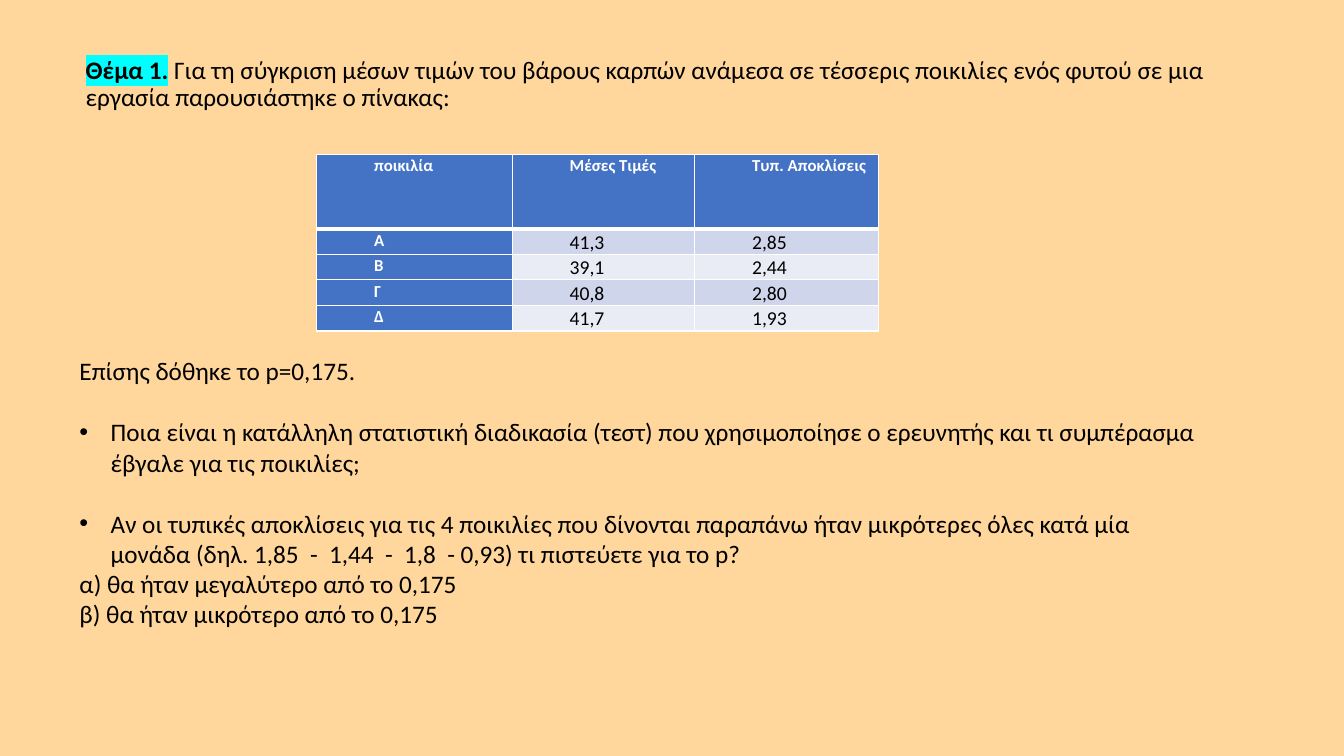
from dataclasses import dataclass

from lxml.etree import SubElement
from pptx import Presentation
from pptx.dml.color import RGBColor
from pptx.enum.text import MSO_AUTO_SIZE as AutoSize
from pptx.oxml.ns import qn
from pptx.util import Emu, Pt

EMU_PER_PX = 9144  # 100 px to the inch
FONT = "Calibri"
COLORS = {
    "sand": "FFC671",
    "black": "000000",
    "white": "FFFFFF",
    "cyan": "00FFFF",
    "blue": "4472C4",
    "band_dark": "CFD5EA",
    "band_light": "E9EBF5",
}


@dataclass(frozen=True)
class Line:
    text: str
    bullet: bool = False
    gap_before: int = 0


QUESTION_LABEL = "Θέμα 1."
QUESTION = (
    "Για τη σύγκριση μέσων τιμών του βάρους καρπών ανάμεσα σε τέσσερις "
    "ποικιλίες ενός φυτού σε μια εργασία παρουσιάστηκε ο πίνακας:"
)
VARIETIES = [
    ("ποικιλία", "Μέσες Τιμές", "Τυπ. Αποκλίσεις"),
    ("Α", "41,3", "2,85"),
    ("Β", "39,1", "2,44"),
    ("Γ", "40,8", "2,80"),
    ("Δ", "41,7", "1,93"),
]
COLUMN_WIDTHS = (194, 181, 182)
ROW_HEIGHTS = (74, 25, 25, 25, 25)
TASKS = [
    Line("Επίσης δόθηκε το p=0,175."),
    Line("Ποια είναι η κατάλληλη στατιστική διαδικασία (τεστ) που χρησιμοποίησε "
         "ο ερευνητής και τι συμπέρασμα έβγαλε για τις ποικιλίες;", True, 22),
    Line("Αν οι τυπικές αποκλίσεις για τις 4 ποικιλίες που δίνονται παραπάνω ήταν "
         "μικρότερες όλες κατά μία μονάδα (δηλ. 1,85  -  1,44  -  1,8  - 0,93) "
         "τι πιστεύετε για το p?", True, 22),
    Line("α) θα ήταν μεγαλύτερο από το 0,175"),
    Line("β) θα ήταν μικρότερο από το 0,175"),
]


def px(length: int) -> Emu:
    return Emu(length * EMU_PER_PX)


def rgb(name: str) -> RGBColor:
    return RGBColor.from_string(COLORS[name])


def add_span(para, text: str, size: int = 18, color: str = "black",
             bold: bool = False, highlight: str = "") -> None:
    span = para.add_run()
    span.text = text
    span.font.size = Pt(size)
    span.font.bold = bold
    span.font.color.rgb = rgb(color)
    if highlight:
        mark = SubElement(span.font._element, qn("a:highlight"))
        SubElement(mark, qn("a:srgbClr"), val=COLORS[highlight])
    span.font.name = FONT


def set_indent(para, left: int, first: int = 0, bullet: bool = False) -> None:
    props = para._p.get_or_add_pPr()
    props.set("marL", str(px(left)))
    props.set("indent", str(px(first)))
    if bullet:
        SubElement(props, qn("a:buFont"), typeface="Arial")
        SubElement(props, qn("a:buChar"), char="•")
    else:
        SubElement(props, qn("a:buNone"))


def paint_background(page) -> None:
    fill = page.background.fill
    fill.solid()
    fill.fore_color.rgb = rgb("sand")
    color = page.background._cSld.find(".//" + qn("a:srgbClr"))
    SubElement(color, qn("a:alpha"), val="69000")


def write_question(page) -> None:
    page.shapes.title.element.getparent().remove(page.shapes.title.element)
    body = page.placeholders[1]
    body.left, body.top, body.width, body.height = map(px, (75, 52, 1167, 623))
    body.text_frame.auto_size = AutoSize.NONE
    para = body.text_frame.paragraphs[0]
    para.line_spacing = 0.9
    para.space_before = Pt(10)
    set_indent(para, 0)
    add_span(para, QUESTION_LABEL, bold=True, highlight="cyan")
    add_span(para, " ")
    add_span(para, QUESTION)


def add_borders(cell, row: int) -> None:
    """Draw white cell edges, thicker under the header row."""
    props = cell._tc.get_or_add_tcPr()
    widths = {"L": 1, "R": 1, "T": 3 if row == 1 else 1, "B": 3 if row == 0 else 1}
    for side, width in widths.items():
        edge = SubElement(props, qn(f"a:ln{side}"), w=str(Pt(width)))
        fill = SubElement(edge, qn("a:solidFill"))
        SubElement(fill, qn("a:srgbClr"), val=COLORS["white"])


def fill_cell(cell, text: str, row: int, column: int) -> None:
    heading = row == 0 or column == 0
    band = "band_dark" if row % 2 else "band_light"
    add_borders(cell, row)
    cell.fill.solid()
    cell.fill.fore_color.rgb = rgb("blue" if heading else band)
    cell.margin_left = cell.margin_right = px(7)
    cell.margin_top = cell.margin_bottom = 0
    para = cell.text_frame.paragraphs[0]
    para.line_spacing = 1.07
    set_indent(para, 50)
    if heading:
        add_span(para, text, 12, "white", bold=True)
    else:
        add_span(para, text, 14)


def add_varieties_table(page) -> None:
    table = page.shapes.add_table(
        len(ROW_HEIGHTS), len(COLUMN_WIDTHS), px(314), px(153),
        px(sum(COLUMN_WIDTHS)), px(sum(ROW_HEIGHTS))).table
    table.first_col = True
    for column, width in zip(table.columns, COLUMN_WIDTHS):
        column.width = px(width)
    for row, height in zip(table.rows, ROW_HEIGHTS):
        row.height = px(height)
    for row, values in enumerate(VARIETIES):
        for column, text in enumerate(values):
            fill_cell(table.cell(row, column), text, row, column)


def add_tasks(page) -> None:
    box = page.shapes.add_textbox(px(69), px(348), px(1126), px(283))
    frame = box.text_frame
    frame.word_wrap = True
    frame.auto_size = AutoSize.SHAPE_TO_FIT_TEXT
    for number, line in enumerate(TASKS):
        para = frame.add_paragraph() if number else frame.paragraphs[0]
        para.space_before = Pt(line.gap_before)
        if line.bullet:
            set_indent(para, 31, -31, bullet=True)
        add_span(para, line.text)


def main() -> None:
    deck = Presentation()
    deck.slide_width, deck.slide_height = px(1333), px(750)
    page = deck.slides.add_slide(deck.slide_layouts[1])
    paint_background(page)
    write_question(page)
    add_varieties_table(page)
    add_tasks(page)
    deck.save("out.pptx")


if __name__ == "__main__":
    main()
